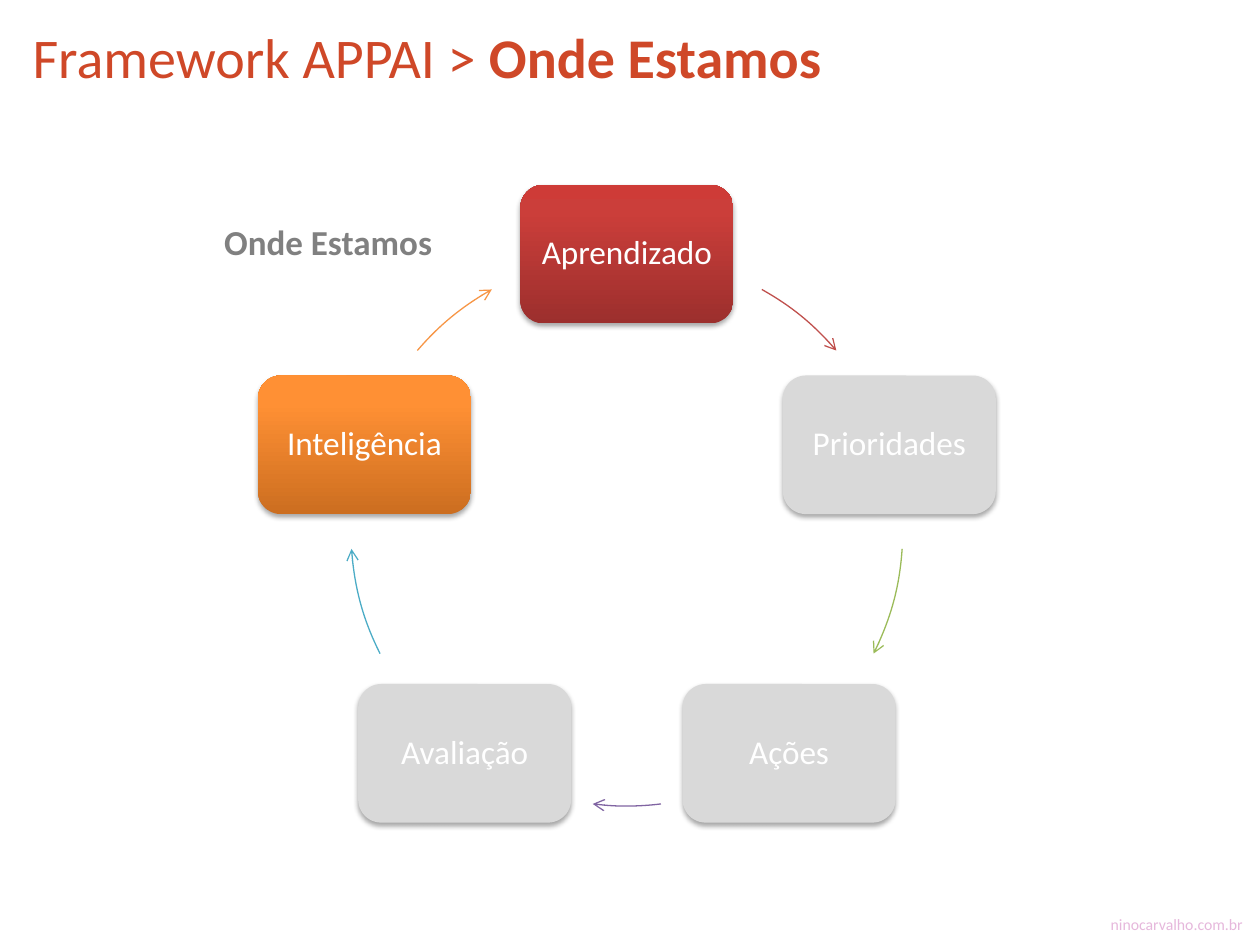
from math import cos, radians, sin

from lxml import etree
from pptx import Presentation
from pptx import util as u
from pptx.dml.color import RGBColor
from pptx.enum import shapes, text
from pptx.oxml.ns import qn

WIDTH, HEIGHT = 10, 7.5
CENTER_X, CENTER_Y, RADIUS = 0.4975 * WIDTH, 0.561 * HEIGHT, 2.19
BOX_WIDTH, BOX_HEIGHT = 1.69, 1.1
FONT = "Calibri"

COLORS = {
    "title": "CF4828",
    "label": "808080",
    "footer": "E6B8DC",
    "white": "FFFFFF",
    "inactive": "D9D9D9",
    "shadow": "000000",
}
RED = ((0, "9C2F2D"), (80, "CB3E3A"), (100, "CE3B37"))
ORANGE = ((0, "CC6E20"), (80, "FF9034"), (100, "FF9136"))

STAGES = [
    ("Aprendizado", RED),
    ("Prioridades", None),
    ("Ações", None),
    ("Avaliação", None),
    ("Inteligência", ORANGE),
]
ARROWS = [
    (299.3, 319.4, "C0504D"),
    (3.9, 26.6, "9BBB59"),
    (82.9, 97.1, "8064A2"),
    (153.4, 176.1, "4BACC6"),
    (220.6, 240.7, "F79646"),
]


def rgb(value):
    return RGBColor.from_string(value)


def add_run(paragraph, content, size, color, bold=False):
    run = paragraph.add_run()
    run.text = content
    run.font.name = FONT
    run.font.size = u.Pt(size)
    run.font.bold = bold
    run.font.color.rgb = rgb(color)


def add_text(slide, bounds, runs, size, color, alignment):
    shape = slide.shapes.add_textbox(*(u.Inches(length) for length in bounds))
    shape.text_frame.word_wrap = True
    paragraph = shape.text_frame.paragraphs[0]
    paragraph.alignment = alignment
    for content, bold in runs:
        add_run(paragraph, content, size, color, bold)


def add_color(parent, value):
    return etree.SubElement(parent, qn("a:srgbClr"), val=value)


def fill_gradient(shape, stops):
    shape.fill.gradient()
    shape.fill.gradient_angle = 90
    stop_list = shape.fill._xPr.find(qn("a:gradFill")).find(qn("a:gsLst"))
    for stop in list(stop_list):
        stop_list.remove(stop)
    for position, value in stops:
        add_color(etree.SubElement(stop_list, qn("a:gs"), pos=str(position * 1000)), value)


def add_shadow(shape):
    effects = shape._element.spPr.find(qn("a:effectLst"))
    shadow = etree.SubElement(
        effects, qn("a:outerShdw"), blurRad=str(u.Pt(3.1)), dist=str(u.Pt(1.8)),
        dir="5400000", rotWithShape="0")
    etree.SubElement(add_color(shadow, COLORS["shadow"]), qn("a:alpha"), val="35000")


def add_stage(slide, index, name, stops):
    angle = radians(index * 360 / len(STAGES) - 90)
    left = CENTER_X + RADIUS * cos(angle) - BOX_WIDTH / 2
    top = CENTER_Y + RADIUS * sin(angle) - BOX_HEIGHT / 2
    shape = slide.shapes.add_shape(
        shapes.MSO_SHAPE.ROUNDED_RECTANGLE, u.Inches(left), u.Inches(top),
        u.Inches(BOX_WIDTH), u.Inches(BOX_HEIGHT))
    if stops:
        fill_gradient(shape, stops)
    else:
        shape.fill.solid()
        shape.fill.fore_color.rgb = rgb(COLORS["inactive"])
    shape.line.fill.background()
    shape.shadow.inherit = False
    add_shadow(shape)

    frame = shape.text_frame
    frame.word_wrap = True
    frame.vertical_anchor = text.MSO_ANCHOR.MIDDLE
    frame.margin_left = frame.margin_right = u.Inches(0.08)
    frame.margin_top = frame.margin_bottom = u.Inches(0.08)
    paragraph = frame.paragraphs[0]
    paragraph.alignment = text.PP_ALIGN.CENTER
    paragraph.line_spacing = 0.9
    add_run(paragraph, name, 19, COLORS["white"])


def add_arrow(slide, start, end, color):
    shape = slide.shapes.add_shape(
        shapes.MSO_SHAPE.ARC, u.Inches(CENTER_X - RADIUS), u.Inches(CENTER_Y - RADIUS),
        u.Inches(2 * RADIUS), u.Inches(2 * RADIUS))
    shape.adjustments[0] = start * 0.6
    shape.adjustments[1] = end * 0.6
    shape.fill.background()
    shape.shadow.inherit = False
    shape.line.color.rgb = rgb(color)
    shape.line.width = u.Pt(0.75)
    etree.SubElement(shape.line._get_or_add_ln(), qn("a:tailEnd"), type="arrow")


def main():
    presentation = Presentation()
    presentation.slide_width = u.Inches(WIDTH)
    presentation.slide_height = u.Inches(HEIGHT)
    slide = presentation.slides.add_slide(presentation.slide_layouts[6])

    add_text(slide, (0.24, 7.21, 9.72, 0.17), [("ninocarvalho.com.br", False)],
             9, COLORS["footer"], text.PP_ALIGN.RIGHT)
    for index, (stage, arrow) in enumerate(zip(STAGES, ARROWS)):
        add_stage(slide, index, *stage)
        add_arrow(slide, *arrow)
    add_text(slide, (1.54, 1.7, 2.13, 0.44), [("Onde Estamos", True)],
             20, COLORS["label"], text.PP_ALIGN.CENTER)
    add_text(slide, (0.16, 0.13, 9.09, 0.55),
             [("Framework APPAI > ", False), ("Onde Estamos", True)],
             32, COLORS["title"], text.PP_ALIGN.LEFT)

    presentation.save("out.pptx")


if __name__ == "__main__":
    main()
